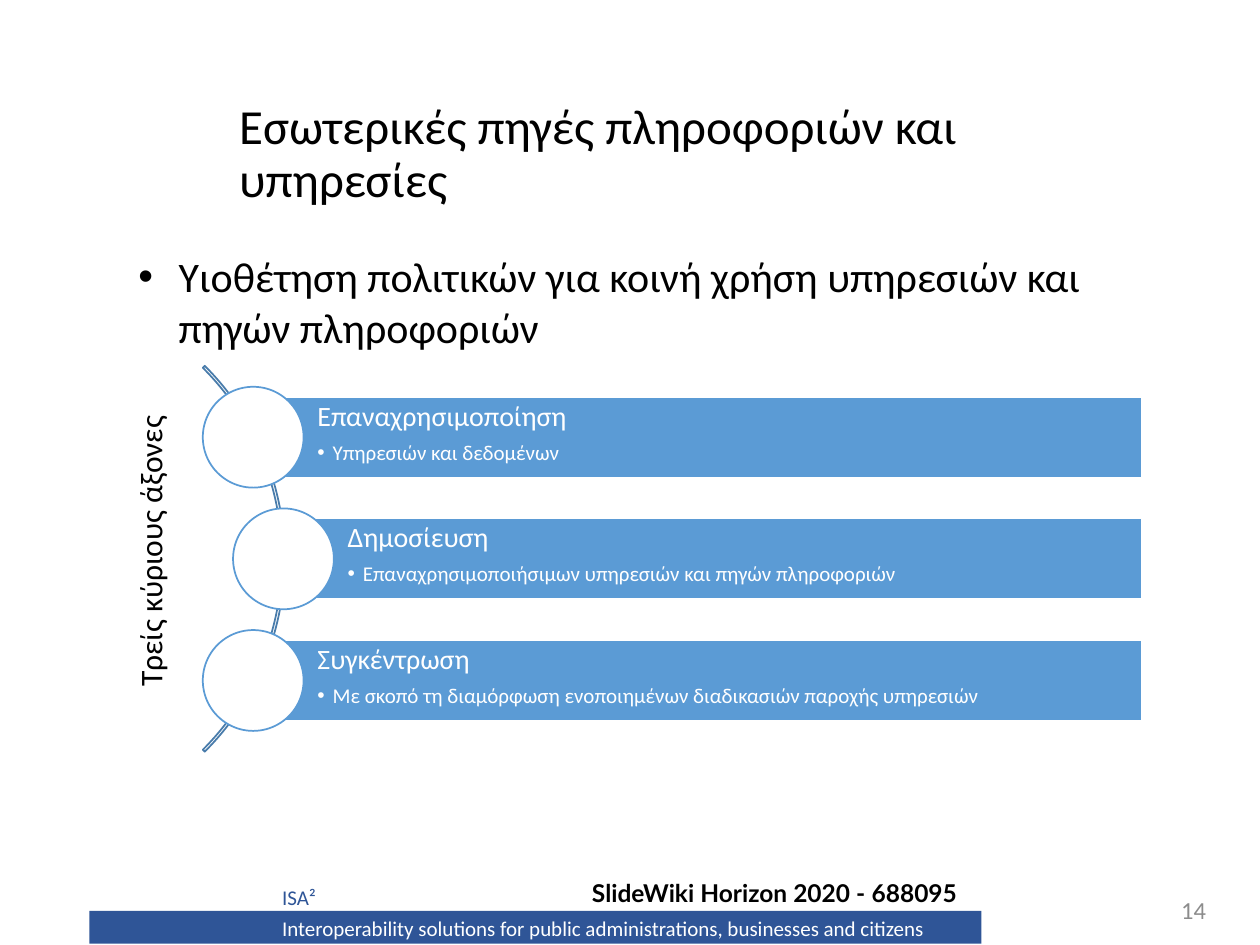
from lxml.etree import SubElement
from pptx import Presentation
from pptx.dml.color import RGBColor
from pptx.enum.shapes import MSO_SHAPE as Shape
from pptx.enum.text import MSO_ANCHOR as Anchor, PP_ALIGN as Align
from pptx.oxml.ns import qn
from pptx.util import Inches, Pt

WIDTH, HEIGHT = Inches(10), Inches(7.5)
COLORS = {
    "navy": "2F5597", "blue": "5B9BD5", "arc": "497CAB",
    "white": "FFFFFF", "black": "000000", "grey": "8C8C8C",
}
BARS = [
    ("Επαναχρησιμοποίηση", "Υπηρεσιών και δεδομένων"),
    ("Δημοσίευση", "Επαναχρησιμοποιήσιμων υπηρεσιών και πηγών πληροφοριών"),
    ("Συγκέντρωση", "Με σκοπό τη διαμόρφωση ενοποιημένων διαδικασιών παροχής υπηρεσιών"),
]


def color(name):
    """Return the named colour."""
    return RGBColor.from_string(COLORS[name])


def area(left, top, width, height):
    """Turn percentages of the slide into lengths."""
    return (int(WIDTH * left / 100), int(HEIGHT * top / 100),
            int(WIDTH * width / 100), int(HEIGHT * height / 100))


def add_figure(slide, kind, box, fill=None, line=None):
    """Add a preset shape without a shadow."""
    shape = slide.shapes.add_shape(kind, *area(*box))
    shape.shadow.inherit = False
    if fill:
        shape.fill.solid()
        shape.fill.fore_color.rgb = color(fill)
    else:
        shape.fill.background()
    if line:
        shape.line.color.rgb = color(line)
        shape.line.width = Pt(1)
    else:
        shape.line.fill.background()
    return shape


def style(paragraph, text, size, ink, font="Calibri", bold=False, align=Align.LEFT,
          spacing=None, after=0, margin=0, hanging=0):
    """Fill a paragraph and set its format, with a bullet if it hangs."""
    paragraph.text = text
    paragraph.alignment = align
    paragraph.space_after = Pt(after)
    if spacing:
        paragraph.line_spacing = spacing
    properties = paragraph._p.get_or_add_pPr()
    properties.set("marL", str(Inches(margin)))
    properties.set("indent", str(-Inches(hanging)))
    if hanging:
        SubElement(properties, qn("a:buFont")).set("typeface", "Arial")
        SubElement(properties, qn("a:buChar")).set("char", "•")
    paragraph.font.name = font
    paragraph.font.size = Pt(size)
    paragraph.font.bold = bold
    paragraph.font.color.rgb = color(ink)


def add_text(slide, box, text, size, ink, anchor=Anchor.TOP, **options):
    """Add a wrapping text box with one paragraph."""
    shape = slide.shapes.add_textbox(*area(*box))
    frame = shape.text_frame
    frame.word_wrap = True
    frame.vertical_anchor = anchor
    style(frame.paragraphs[0], text, size, ink, **options)
    return shape


def add_bar(slide, row, heading, detail):
    """Add one bar of the list with the circle centred on its left end."""
    left = 22.5 if row == 1 else 20.1
    top, height = 42 + 12.87 * row, 8.53
    bar = add_figure(slide, Shape.RECTANGLE, (left, top, 90.6 - left, height), "blue", "white")
    frame = bar.text_frame
    frame.word_wrap = True
    frame.vertical_anchor = Anchor.TOP
    frame.margin_left = Inches(0.51)
    frame.margin_top = frame.margin_right = frame.margin_bottom = Inches(0.04)
    style(frame.paragraphs[0], heading, 16, "white", spacing=0.9, after=5.6)
    style(frame.add_paragraph(), detail, 12, "white", spacing=0.9, after=1.8,
          margin=0.12, hanging=0.12)
    circle_width, circle_height = 8, 10.67
    add_figure(slide, Shape.OVAL,
               (left - circle_width / 2, top + (height - circle_height) / 2,
                circle_width, circle_height), "white", "blue")


def add_footer(slide):
    """Add the band, the project line, the programme lines and the number."""
    add_figure(slide, Shape.RECTANGLE, (7.1, 96.4, 70.8, 3.47), "navy")
    add_text(slide, (46, 92.27, 36.4, 4.53), "SlideWiki Horizon 2020 -\u00a0688095", 14, "black",
             font="Lato", bold=True)
    programme = add_text(slide, (6.4, 92.27, 79.2, 8.13), "ISA²", 12, "navy",
                         spacing=Pt(18), margin=1.5)
    style(programme.text_frame.add_paragraph(),
          "Interoperability solutions for public administrations, businesses and citizens",
          12, "white", spacing=Pt(18), margin=1.5)
    add_text(slide, (91.1, 93.6, 5.6, 5.33), "14", 14, "grey", Anchor.MIDDLE, align=Align.RIGHT)


def add_axes(slide):
    """Add the arc, the three bars and the upright label."""
    arc = add_figure(slide, Shape.BLOCK_ARC, (-20.7, 30.27, 43.3, 57.73), line="arc")
    for index, value in enumerate((189, 27, 0.005)):
        arc.adjustments[index] = value
    for row, (heading, detail) in enumerate(BARS):
        add_bar(slide, row, heading, detail)
    label = add_text(slide, (-0.4, 54.93, 24.6, 5.33), "Τρείς κύριους άξονες", 18, "black")
    label.rotation = 270


def main():
    """Build and save the slide."""
    presentation = Presentation()
    presentation.slide_width, presentation.slide_height = WIDTH, HEIGHT
    slide = presentation.slides.add_slide(presentation.slide_layouts[6])
    add_footer(slide)
    add_text(slide, (18, 9.2, 64, 14.53), "Εσωτερικές πηγές πληροφοριών και υπηρεσίες",
             28, "black", Anchor.MIDDLE, spacing=0.9)
    add_text(slide, (10, 25.87, 81.9, 61.87),
             "Υιοθέτηση πολιτικών για κοινή χρήση υπηρεσιών και πηγών πληροφοριών",
             24, "black", margin=0.32, hanging=0.32)
    add_axes(slide)
    presentation.save("out.pptx")


if __name__ == "__main__":
    main()
